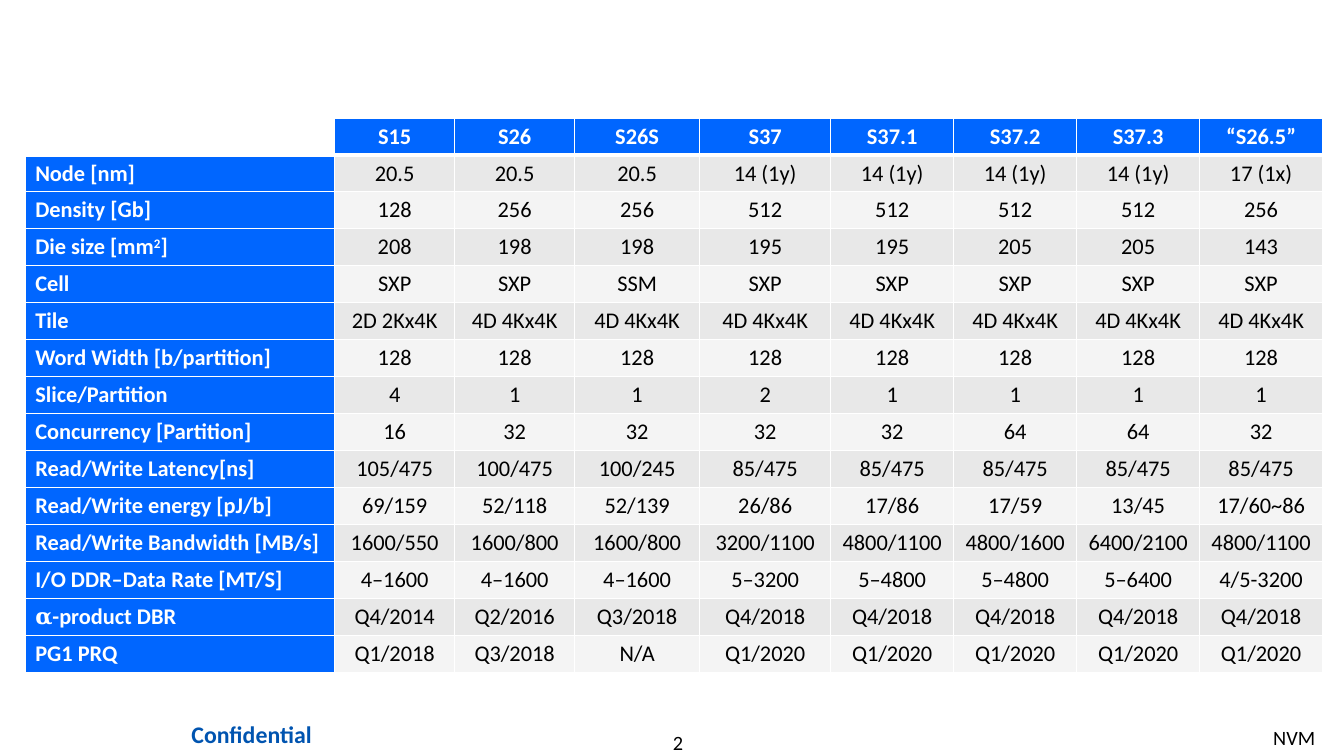
from lxml import etree
from pptx import Presentation
from pptx import util as u
from pptx.dml.color import RGBColor
from pptx.enum import text
from pptx.oxml.ns import qn

COLORS = {
    "header": "0066FF", "odd": "E8E8E8", "even": "F4F4F4",
    "white": "FFFFFF", "black": "000000", "confidential": "0054B0",
}
GENERATIONS = ["", "S15", "S26", "S26S", "S37", "S37.1", "S37.2", "S37.3", "“S26.5”"]
SPECS = [
    ("Node [nm]", "20.5", "20.5", "20.5", "14 (1y)", "14 (1y)", "14 (1y)", "14 (1y)", "17 (1x)"),
    ("Density [Gb]", "128", "256", "256", "512", "512", "512", "512", "256"),
    ("Die size [mm|2|]", "208", "198", "198", "195", "195", "205", "205", "143"),
    ("Cell", "SXP", "SXP", "SSM", "SXP", "SXP", "SXP", "SXP", "SXP"),
    ("Tile", "2D 2Kx4K", *["4D 4Kx4K"] * 7),
    ("Word Width [b/partition]", *["128"] * 8),
    ("Slice/Partition", "4", "1", "1", "2", "1", "1", "1", "1"),
    ("Concurrency [Partition]", "16", "32", "32", "32", "32", "64", "64", "32"),
    ("Read/Write Latency[ns]", "105/475", "100/475", "100/245", *["85/475"] * 5),
    ("Read/Write energy [pJ/b]", "69/159", "52/118", "52/139", "26/86", "17/86", "17/59",
     "13/45", "17/60~86"),
    ("Read/Write Bandwidth [MB/s]", "1600/550", "1600/800", "1600/800", "3200/1100",
     "4800/1100", "4800/1600", "6400/2100", "4800/1100"),
    ("I/O DDR–Data Rate [MT/S]", "4–1600", "4–1600", "4–1600", "5–3200", "5–4800", "5–4800",
     "5–6400", "4/5-3200"),
    ("𝛂|-product DBR", "Q4/2014", "Q2/2016", "Q3/2018", *["Q4/2018"] * 5),
    ("PG1 PRQ", "Q1/2018", "Q3/2018", "N/A", *["Q1/2020"] * 5),
]
COLUMN_WIDTHS = [3.07, 1.19, 1.19, 1.24, 1.3, 1.22, 1.22, 1.22, 1.22]
TABLE_LEFT, TABLE_TOP, TABLE_HEIGHT = 0.25, 1.17, 5.5
CENTER, LEFT = text.PP_ALIGN.CENTER, text.PP_ALIGN.LEFT
FOOTERS = [
    ("2", (5.56, 7.24, 2.33, 0.24), (0, 0), 14.5, "black", False, CENTER),
    ("NVM", (12.53, 7.15, 0.7, 0.35), (0.1, 0.05), 14.5, "black", False, LEFT),
    ("Confidential", (1.55, 7.08, 1.89, 0.41), (0.12, 0.06), 17, "confidential", True, CENTER),
]


def write(paragraph, content, size, color, bold, align):
    paragraph.alignment = align
    for part in content.split("|"):
        run = paragraph.add_run()
        run.text = part
        run.font.name = "Cambria" if part == "𝛂" else "Calibri"
        run.font.size = u.Pt(size)
        run.font.bold = bold
        run.font.color.rgb = RGBColor.from_string(COLORS[color])
        if "|" in content and part == "2":
            run.font._element.set("baseline", "30000")


def set_borders(cell, row):
    properties = cell._tc.get_or_add_tcPr()
    widths = {"L": 1, "R": 1, "T": 3 if row == 1 else 1, "B": 3 if row == 0 else 1}
    for side, width in widths.items():
        line = etree.SubElement(properties, qn(f"a:ln{side}"), w=str(u.Pt(width)))
        fill = etree.SubElement(line, qn("a:solidFill"))
        etree.SubElement(fill, qn("a:srgbClr"), val=COLORS["white"])


def fill_cell(cell, row, column, content):
    cell.vertical_anchor = text.MSO_ANCHOR.MIDDLE
    cell.margin_top = cell.margin_bottom = u.Inches(0.04 if content else 0)
    set_borders(cell, row)
    if not content:
        cell.fill.background()
        return
    heading = row == 0 or column == 0
    shade = "header" if heading else "odd" if row % 2 else "even"
    cell.fill.solid()
    cell.fill.fore_color.rgb = RGBColor.from_string(COLORS[shade])
    write(cell.text_frame.paragraphs[0], content, 16, "white" if heading else "black",
          heading, CENTER if column else LEFT)


def add_spec_table(slide):
    rows = [GENERATIONS, *SPECS]
    frame = slide.shapes.add_table(
        len(rows), len(COLUMN_WIDTHS), u.Inches(TABLE_LEFT), u.Inches(TABLE_TOP),
        u.Inches(sum(COLUMN_WIDTHS)), u.Inches(TABLE_HEIGHT))
    table = frame.table
    for column, width in zip(table.columns, COLUMN_WIDTHS):
        column.width = u.Inches(width)
    for r, values in enumerate(rows):
        table.rows[r].height = u.Inches(TABLE_HEIGHT / len(rows))
        for c, content in enumerate(values):
            fill_cell(table.cell(r, c), r, c, content)


def add_footer(slide, content, place, insets, size, color, bold, align):
    frame = slide.shapes.add_textbox(*map(u.Inches, place)).text_frame
    frame.word_wrap = True
    frame.margin_left = frame.margin_right = u.Inches(insets[0])
    frame.margin_top = frame.margin_bottom = u.Inches(insets[1])
    write(frame.paragraphs[0], content, size, color, bold, align)


def main():
    deck = Presentation()
    deck.slide_width, deck.slide_height = u.Inches(13.33), u.Inches(7.5)
    slide = deck.slides.add_slide(deck.slide_layouts[6])
    for footer in FOOTERS:
        add_footer(slide, *footer)
    add_spec_table(slide)
    deck.save("out.pptx")


if __name__ == "__main__":
    main()
